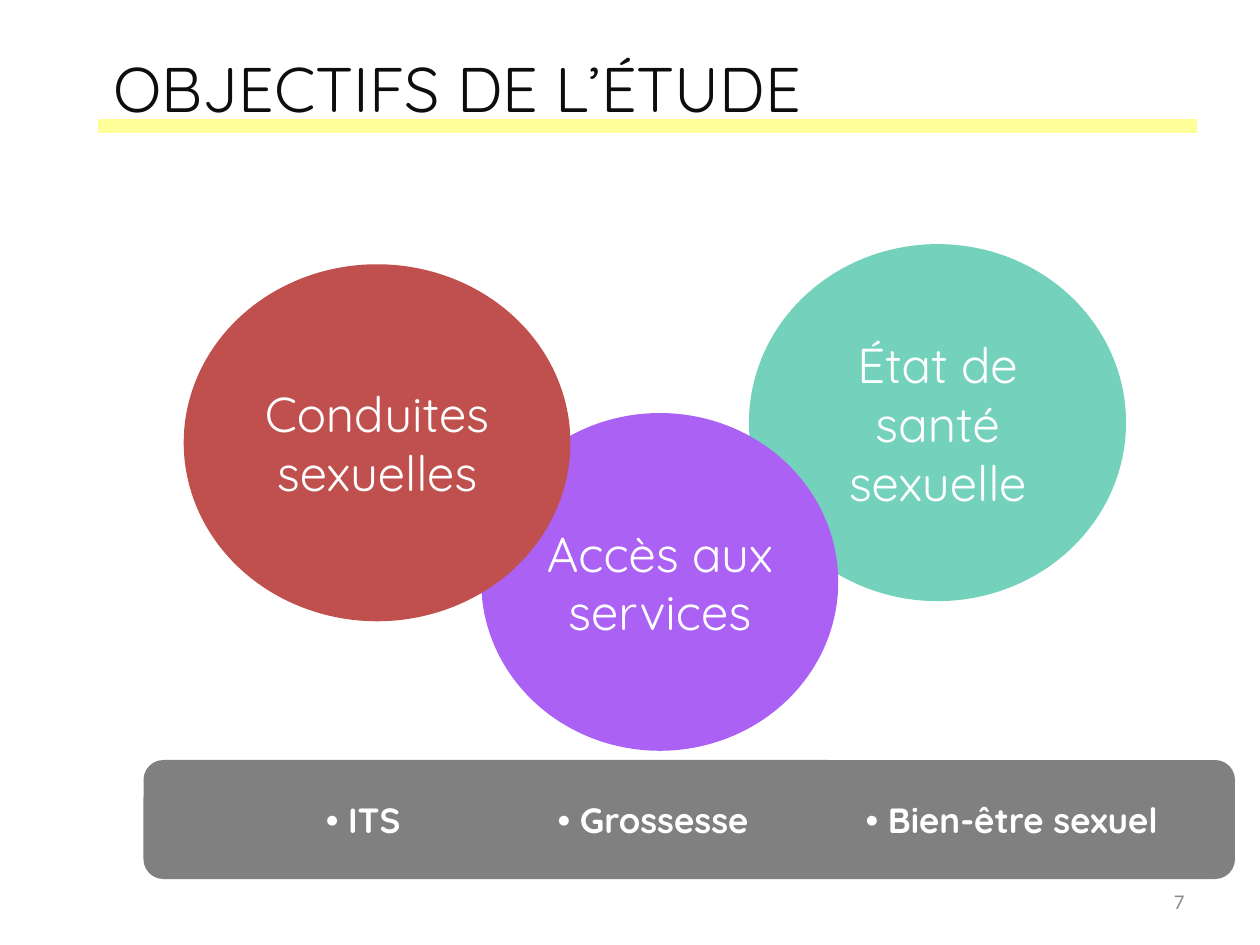
from pptx import Presentation
from pptx.dml.color import RGBColor as Rgb
from pptx.enum.shapes import MSO_CONNECTOR as Link, MSO_SHAPE as Kind
from pptx.enum.text import MSO_ANCHOR as Anchor, PP_ALIGN as Align
from pptx.oxml.ns import qn
from pptx.util import Pt
from lxml.etree import SubElement

COLORS = {
    "ink": "0D0D0D", "gray": "8C8C8C", "white": "FFFFFF", "rule": "FFFF99",
    "mint": "74D2BC", "violet": "AC61F5", "red": "C0504D", "bar": "808080",
}


def color(name):
    return Rgb.from_string(COLORS[name])


def write(shape, text, size, ink="white", face="Quicksand", bold=False,
          align=Align.CENTER, stops=()):
    """Fill a shape with one paragraph; stops are tab places in points."""
    frame = shape.text_frame
    frame.word_wrap = True
    frame.vertical_anchor = Anchor.MIDDLE
    para = frame.paragraphs[0]
    para.alignment = align
    if stops:
        tabs = SubElement(para._p.get_or_add_pPr(), qn("a:tabLst"))
        for stop in stops:
            SubElement(tabs, qn("a:tab"), pos=str(Pt(stop)), algn="l")
    run = para.add_run()
    run.text = text
    font = run.font
    font.size, font.name, font.bold = Pt(size), face, bold
    font.color.rgb = color(ink)


def add_rule(slide, left, right, y):
    line = slide.shapes.add_connector(
        Link.STRAIGHT, Pt(left), Pt(y), Pt(right), Pt(y))
    line.line.color.rgb = color("rule")
    line.line.width = Pt(8)
    SubElement(line._element.spPr, qn("a:effectLst"))


def add_label(slide, box, text, size, **style):
    write(slide.shapes.add_textbox(*map(Pt, box)), text, size, **style)


def add_block(slide, kind, box, fill):
    """Add a plain filled shape without outline or shadow."""
    shape = slide.shapes.add_shape(kind, *map(Pt, box))
    shape.shadow.inherit = False
    shape.fill.solid()
    shape.fill.fore_color.rgb = color(fill)
    shape.line.fill.background()
    return shape


def add_circle(slide, box, fill, text):
    write(add_block(slide, Kind.OVAL, box, fill), text, 28)


def add_bar(slide, box, items, stops):
    bar = add_block(slide, Kind.ROUNDED_RECTANGLE, box, "bar")
    bar.text_frame.margin_left = 0
    text = "".join(f"\t• {item}" for item in items)
    write(bar, text, 20, bold=True, align=Align.LEFT, stops=stops)


def main():
    deck = Presentation()
    deck.slide_width, deck.slide_height = Pt(720), Pt(540)
    slide = deck.slides.add_slide(deck.slide_layouts[6])

    add_rule(slide, 56, 684, 72)
    add_label(slide, (57.6, 5, 648, 90), "OBJECTIFS DE L’ÉTUDE", 36,
              ink="ink", align=Align.LEFT)
    add_label(slide, (516, 500.5, 168, 28.8), "7", 12,
              ink="gray", face="Calibri", align=Align.RIGHT)

    add_circle(slide, (428, 139.5, 215.5, 204), "mint", "État de santé sexuelle")
    add_circle(slide, (275, 236, 204, 193), "violet", "Accès aux services")
    add_circle(slide, (105, 151, 221, 204), "red", "Conduites sexuelles")

    add_bar(slide, (82, 434.3, 623.7, 68),
            ("ITS", "Grossesse", "Bien-être sexuel"), (101, 233.5, 409.5))
    deck.save("out.pptx")


if __name__ == "__main__":
    main()
